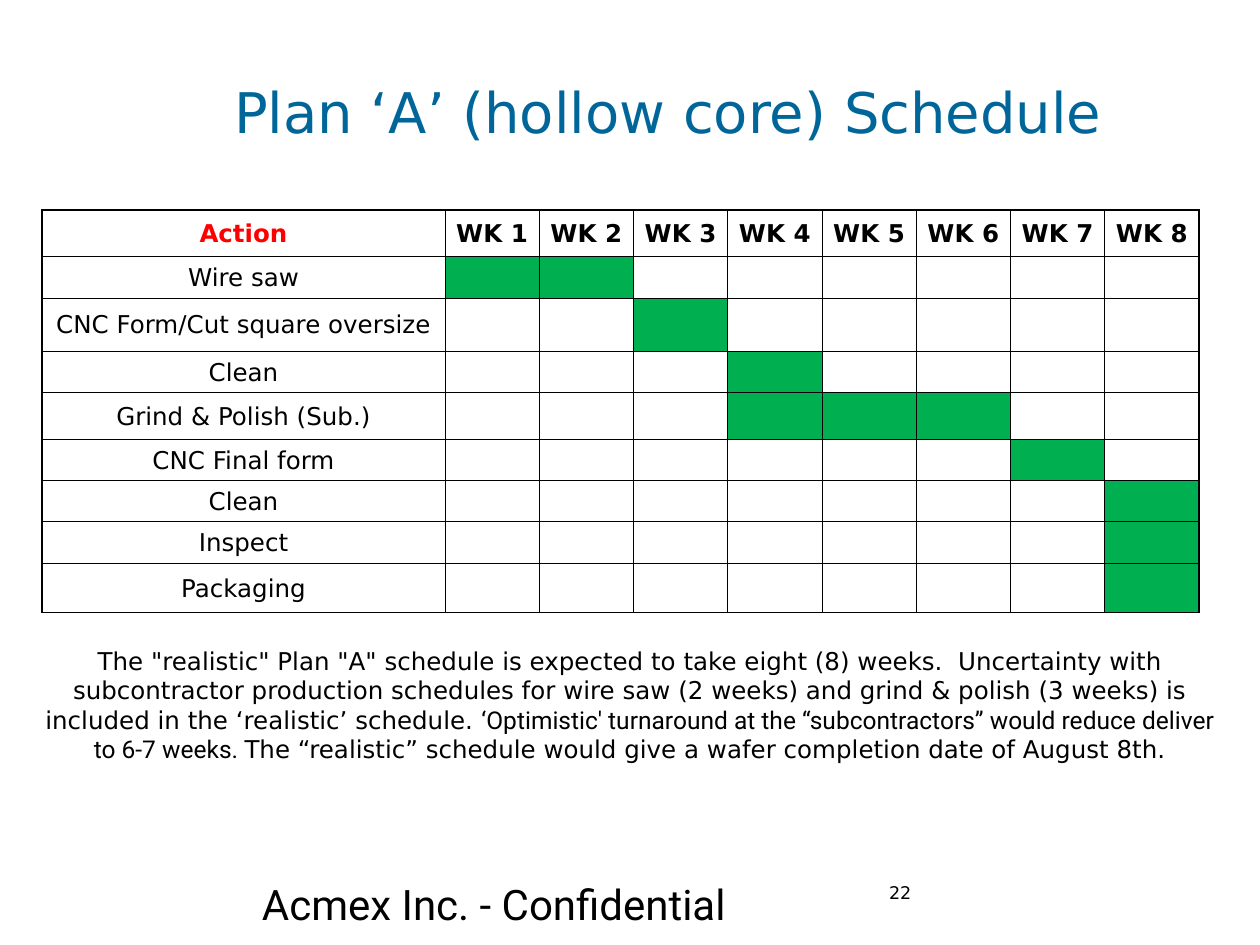
from dataclasses import dataclass

from lxml.etree import SubElement
from pptx import Presentation
from pptx.dml.color import RGBColor as Rgb
from pptx.enum.text import MSO_ANCHOR as Anchor, PP_ALIGN as Align
from pptx.oxml.ns import qn
from pptx.util import Cm, Pt


@dataclass(frozen=True)
class Theme:
    sans: str = "DejaVu Sans"
    alt: str = "Roboto"
    blue: str = "006699"
    red: str = "FF0000"
    green: str = "00B050"
    black: str = "000000"
    title: int = 32
    foot: int = 24
    body: int = 14
    small: int = 10
    thin: float = 0.5
    thick: float = 1


THEME = Theme()
WEEKS = 8
HEAD = 0.94  # header row height, cm

# Action, first week, last week, row height in cm
TASKS = [
    ("Wire saw", 1, 2, 0.84),
    ("CNC Form/Cut square oversize", 3, 3, 1.07),
    ("Clean", 4, 4, 0.84),
    ("Grind & Polish (Sub.)", 4, 6, 0.94),
    ("CNC Final form", 7, 7, 0.83),
    ("Clean", 8, 8, 0.83),
    ("Inspect", 8, 8, 0.84),
    ("Packaging", 8, 8, 0.99),
]

NOTE = [
    ('The "realistic" Plan "A" schedule is expected to take eight (8) weeks.  '
     "Uncertainty with subcontractor production schedules for wire saw (2 weeks) "
     "and grind & polish (3 weeks) is included in the ‘realistic’ schedule. ",
     THEME.sans),
    ("‘Optimistic' turnaround at the “subcontractors” would reduce deliver "
     "to 6-7 weeks. ", THEME.alt),
    ("The “realistic” schedule would give a wafer completion date of August 8th.",
     THEME.sans),
]


def style(run, size, face=THEME.sans, color=THEME.black, bold=False):
    font = run.font
    font.size, font.name, font.bold = Pt(size), face, bold
    font.color.rgb = Rgb.from_string(color)


def place(shape, left, top, width, height):
    shape.left, shape.top = Cm(left), Cm(top)
    shape.width, shape.height = Cm(width), Cm(height)


def add_title(slide, text):
    title = slide.shapes.title
    place(title, 2.11, 1.07, 22.73, 2.34)
    frame = title.text_frame
    frame.text = text
    frame.vertical_anchor = Anchor.MIDDLE
    para = frame.paragraphs[0]
    para.alignment = Align.CENTER
    style(para.runs[0], THEME.title, color=THEME.blue)


def add_text(slide, box, parts, size, align=Align.CENTER, anchor=Anchor.TOP):
    """Add a one-paragraph box; parts are (text, face) pairs."""
    shape = slide.shapes.add_textbox(*map(Cm, box))
    frame = shape.text_frame
    frame.word_wrap = True
    frame.vertical_anchor = anchor
    para = frame.paragraphs[0]
    para.alignment = align
    for text, face in parts:
        run = para.add_run()
        run.text = text
        style(run, size, face)


def add_edge(cell, side, width):
    props = cell._tc.get_or_add_tcPr()
    line = SubElement(props, qn(f"a:ln{side}"), w=str(Pt(width)))
    fill = SubElement(line, qn("a:solidFill"))
    SubElement(fill, qn("a:srgbClr"), val=THEME.black)


def set_cell(cell, outer, text="", color=THEME.black, bold=False, busy=False):
    """Format a cell; outer names its sides on the table's rim."""
    for side in "LRTB":
        add_edge(cell, side, THEME.thick if side in outer else THEME.thin)
    cell.margin_left = cell.margin_right = cell.margin_top = Cm(0.03)
    cell.margin_bottom = Cm(0)
    cell.vertical_anchor = Anchor.MIDDLE
    if busy:
        cell.fill.solid()
        cell.fill.fore_color.rgb = Rgb.from_string(THEME.green)
    else:
        cell.fill.background()
    if text:
        cell.text = text
        para = cell.text_frame.paragraphs[0]
        para.alignment = Align.CENTER
        style(para.runs[0], THEME.body, color=color, bold=bold)


def add_plan(slide):
    heights = [HEAD] + [task[3] for task in TASKS]
    widths = [8.12] + [1.9] * WEEKS
    last = len(TASKS)
    table = slide.shapes.add_table(
        last + 1, WEEKS + 1, Cm(0.85), Cm(4.23),
        Cm(sum(widths)), Cm(sum(heights))).table
    table.first_row = table.horz_banding = False
    for col, width in zip(table.columns, widths):
        col.width = Cm(width)
    for row, height in zip(table.rows, heights):
        row.height = Cm(height)

    def rim(row, col):
        sides = {"L": col == 0, "R": col == WEEKS, "T": row == 0, "B": row == last}
        return [side for side, on in sides.items() if on]

    # Header row
    set_cell(table.cell(0, 0), rim(0, 0), "Action", THEME.red, True)
    for week in range(1, WEEKS + 1):
        set_cell(table.cell(0, week), rim(0, week), f"WK {week}", bold=True)

    # One row per task, with its weeks filled
    for row, (name, start, end, _) in enumerate(TASKS, 1):
        set_cell(table.cell(row, 0), rim(row, 0), name)
        for week in range(1, WEEKS + 1):
            set_cell(table.cell(row, week), rim(row, week),
                     busy=start <= week <= end)


def main():
    deck = Presentation()
    deck.slide_width, deck.slide_height = Cm(25.4), Cm(19.05)
    slide = deck.slides.add_slide(deck.slide_layouts[5])

    add_title(slide, "Plan ‘A’ (hollow core) Schedule")
    add_plan(slide)
    add_text(slide, (0.64, 12.9, 24.13, 2.64), NOTE, THEME.body)

    # Footer and page number
    add_text(slide, (2.97, 17.58, 13.97, 1.27),
             [("Acmex Inc. - Confidential", THEME.alt)], THEME.foot)
    add_text(slide, (17.15, 17.35, 1.47, 1.27), [("22", THEME.sans)],
             THEME.small, Align.RIGHT, Anchor.MIDDLE)

    deck.save("out.pptx")


if __name__ == "__main__":
    main()
